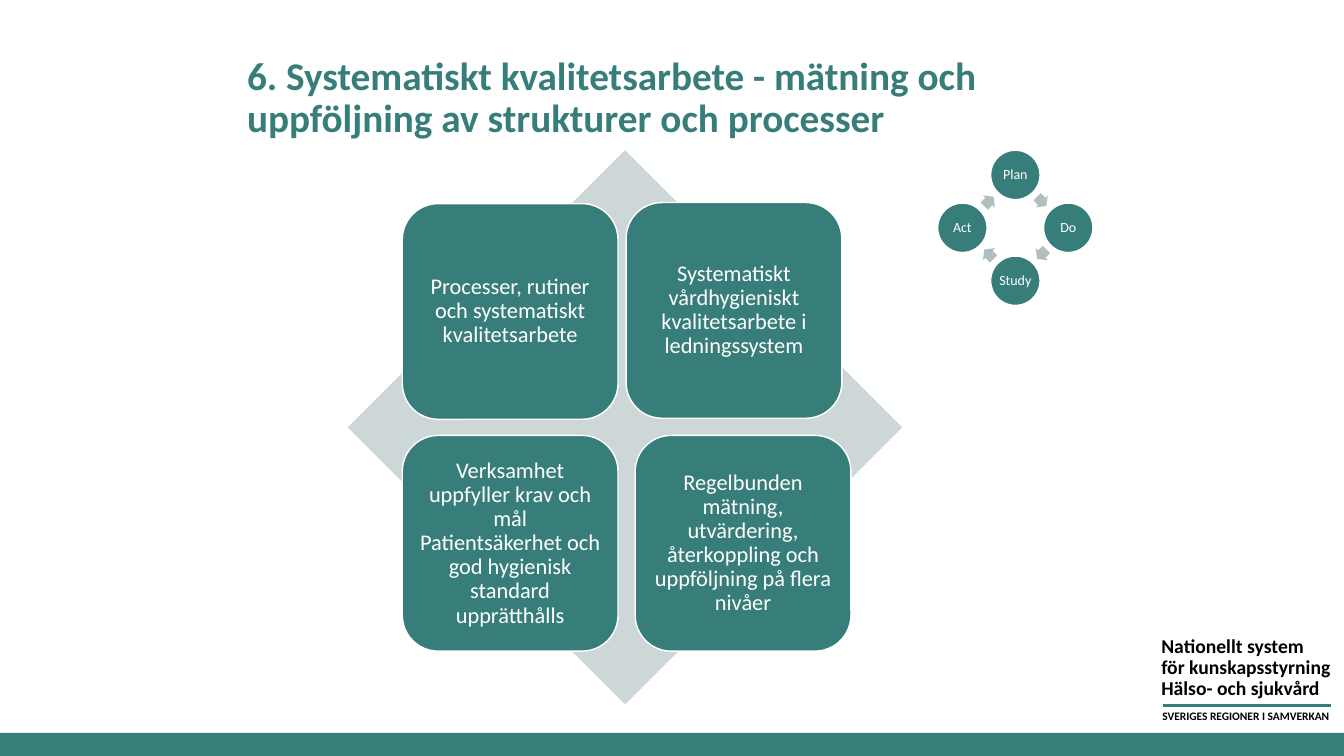
"""Build the slide on systematic quality work with a four-part matrix and a PDSA wheel."""
import math

import pptx
import pptx.util
from lxml import etree
from pptx.dml.color import RGBColor
from pptx.enum.shapes import MSO_CONNECTOR, MSO_SHAPE
from pptx.enum.text import MSO_ANCHOR, PP_ALIGN
from pptx.oxml.ns import qn

Inches = pptx.util.Inches
Pt = pptx.util.Pt
TEAL = "377D7A"
WHITE = "FFFFFF"


def write(shape, text, size, color, bold=False, align=PP_ALIGN.LEFT, anchor=MSO_ANCHOR.TOP,
          spacing=None, inset=None, wrap=True):
    frame = shape.text_frame
    frame.text = text
    frame.word_wrap = wrap
    frame.vertical_anchor = anchor
    if inset is not None:
        frame.margin_left = frame.margin_right = Inches(inset)
        frame.margin_top = frame.margin_bottom = Inches(inset)
    for paragraph in frame.paragraphs:
        paragraph.alignment = align
        paragraph.line_spacing = spacing
        paragraph.font.name = "Calibri"
        paragraph.font.size = Pt(size)
        paragraph.font.bold = bold
        paragraph.font.color.rgb = RGBColor.from_string(color)


def add_block(kind, left, top, width, height, fill, outlined=False):
    shape = slide.shapes.add_shape(kind, Inches(left), Inches(top), Inches(width), Inches(height))
    shape.shadow.inherit = False
    shape.fill.solid()
    shape.fill.fore_color.rgb = RGBColor.from_string(fill)
    if outlined:
        shape.line.color.rgb = RGBColor.from_string(WHITE)
        shape.line.width = Pt(1)
    else:
        shape.line.fill.background()
    return shape


presentation = pptx.Presentation()
presentation.slide_width = Inches(13.33)
presentation.slide_height = Inches(7.5)
slide = presentation.slides.add_slide(presentation.slide_layouts[5])

add_block(MSO_SHAPE.RECTANGLE, 0, 7.27, 13.33, 0.23, TEAL)

sender = slide.shapes.add_textbox(Inches(11.42), Inches(6.27), Inches(1.9), Inches(0.73))
write(sender, "Nationellt system\nför kunskapsstyrning\nHälso- och sjukvård", 14, "000000",
      bold=True, spacing=Pt(14.8), wrap=False)
rule = slide.shapes.add_connector(MSO_CONNECTOR.STRAIGHT, Inches(11.53), Inches(7), Inches(13.2), Inches(7))
rule.line.color.rgb = RGBColor.from_string(TEAL)
rule.line.width = Pt(2.5)
etree.SubElement(rule._element.spPr, qn("a:effectLst"))
tagline = slide.shapes.add_textbox(Inches(11.43), Inches(6.99), Inches(1.9), Inches(0.24))
write(tagline, "SVERIGES REGIONER I SAMVERKAN", 8.2, "000000", bold=True, wrap=False)

title = slide.shapes.title
title.left, title.top, title.width, title.height = Inches(2.35), Inches(0.4), Inches(7.72), Inches(1.16)
write(title, "6. Systematiskt kvalitetsarbete - mätning och uppföljning av strukturer och processer",
      28, TEAL, bold=True, anchor=MSO_ANCHOR.MIDDLE, spacing=0.9)

wheel_x, wheel_y, wheel_radius, arrow_radius = 10.07, 2.26, 0.525, 0.37
circle_size, arrow_width, arrow_height = 0.49, 0.13, 0.17
for step, label in enumerate(["Plan", "Do", "Study", "Act"]):
    angle = math.radians(90 * step - 90)
    circle = add_block(MSO_SHAPE.OVAL,
                       wheel_x + wheel_radius * math.cos(angle) - circle_size / 2,
                       wheel_y + wheel_radius * math.sin(angle) - circle_size / 2,
                       circle_size, circle_size, TEAL, outlined=True)
    write(circle, label, 10, WHITE, align=PP_ALIGN.CENTER, anchor=MSO_ANCHOR.MIDDLE,
          spacing=0.9, inset=0.01, wrap=False)
    angle += math.pi / 4
    arrow = add_block(MSO_SHAPE.RIGHT_ARROW,
                      wheel_x + arrow_radius * math.cos(angle) - arrow_width / 2,
                      wheel_y + arrow_radius * math.sin(angle) - arrow_height / 2,
                      arrow_width, arrow_height, "AEBFBE")
    arrow.adjustments[0] = 0.6
    arrow.rotation = 45 + 90 * step

add_block(MSO_SHAPE.DIAMOND, 3.45, 1.49, 5.5, 5.5, "CED7D7")
quadrants = [
    (3.99, 2.02, "Processer, rutiner och systematiskt kvalitetsarbete"),
    (6.21, 2.01, "Systematiskt vårdhygieniskt kvalitetsarbete i ledningssystem"),
    (3.99, 4.32, "Verksamhet uppfyller krav och mål Patientsäkerhet och god hygienisk standard upprätthålls"),
    (6.3, 4.32, "Regelbunden mätning, utvärdering, återkoppling och uppföljning på flera nivåer"),
]
for left, top, text in quadrants:
    quadrant = add_block(MSO_SHAPE.ROUNDED_RECTANGLE, left, top, 2.14, 2.14, TEAL, outlined=True)
    write(quadrant, text, 16, WHITE, align=PP_ALIGN.CENTER, anchor=MSO_ANCHOR.MIDDLE,
          spacing=0.9, inset=0.07)

presentation.save("out.pptx")
